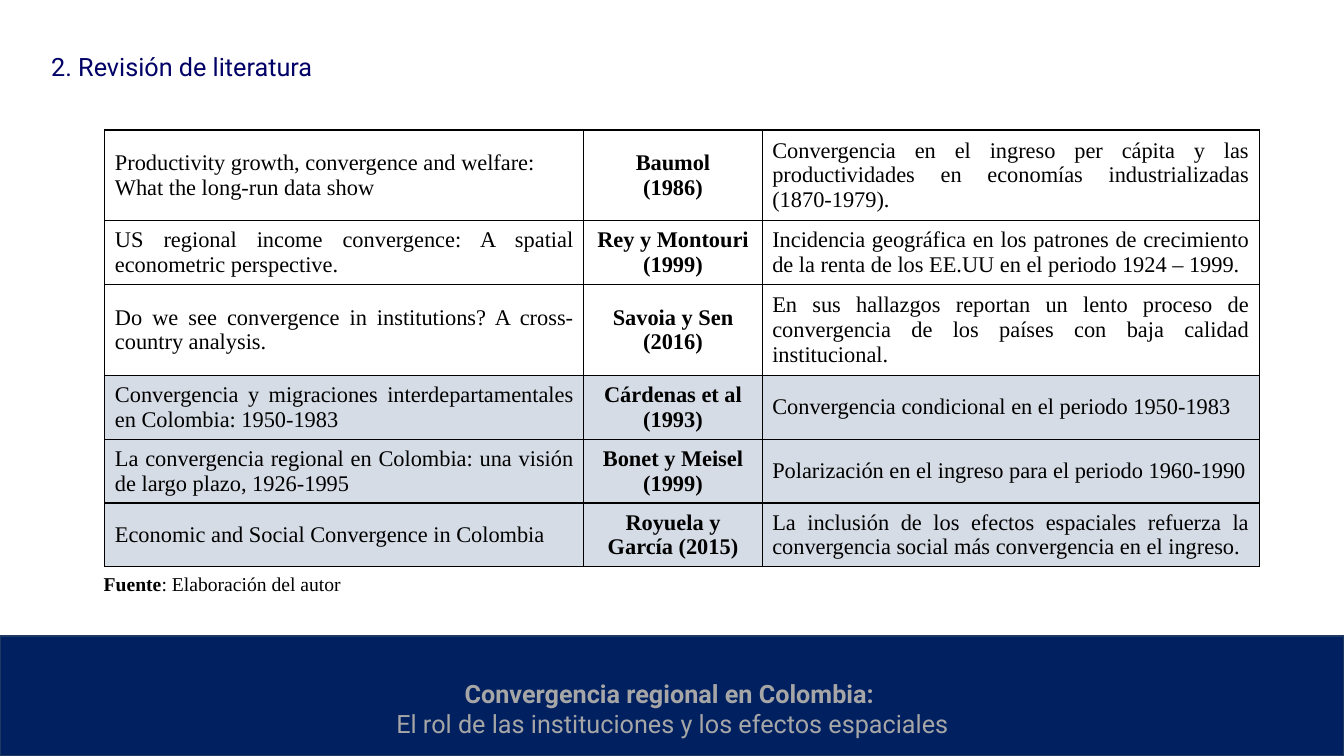
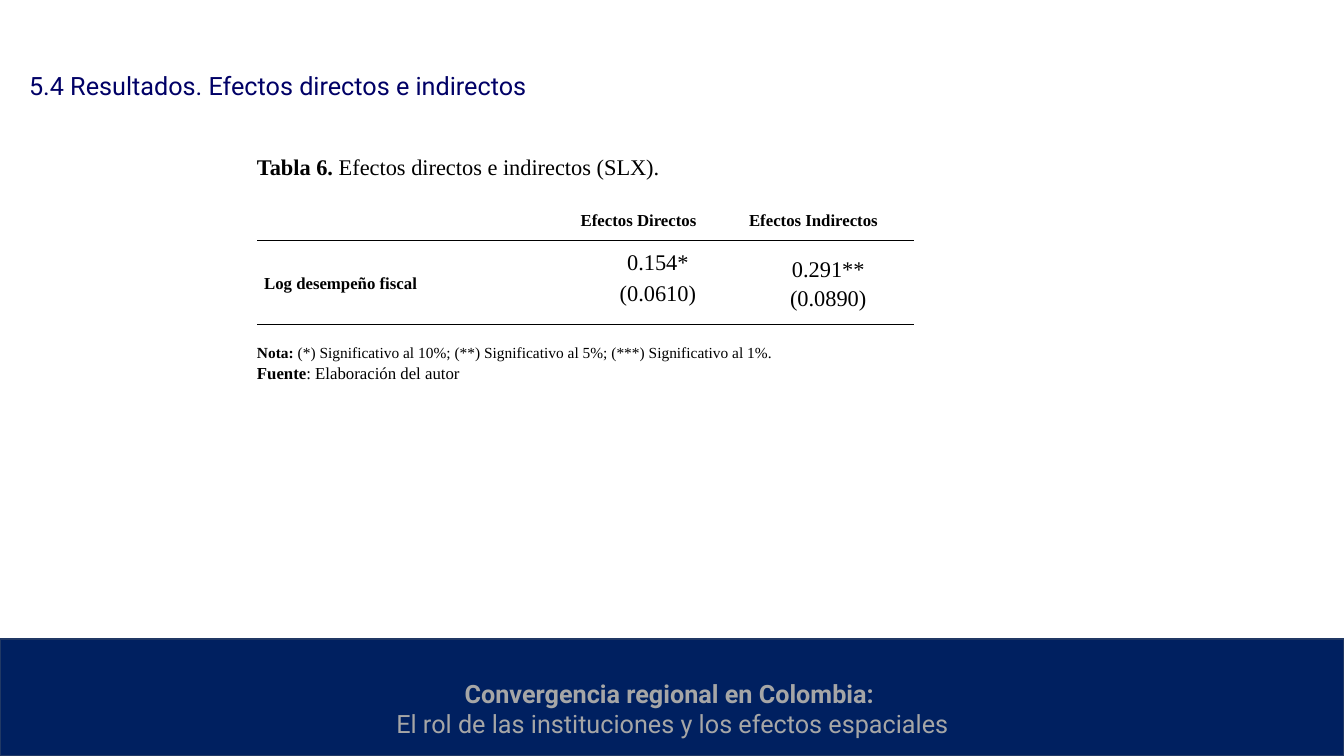
import dataclasses
import typing

import lxml.etree
import pptx
import pptx.dml.color
import pptx.enum.shapes
import pptx.enum.text
import pptx.oxml.ns
import pptx.util

Inches = pptx.util.Inches
Pt = pptx.util.Pt
Align = pptx.enum.text.PP_ALIGN

COLOURS = {
    "title": "000066",
    "text": "000000",
    "band": "002060",
    "band_line": "203864",
    "footer": "A6A6A6",
    "white": "FFFFFF",
    "shaded": "D6DCE5",
}
HEADING_FONT = "Roboto"
BODY_FONT = "Times New Roman"
SLIDE_WIDTH, SLIDE_HEIGHT = 13.33, 7.5
ALL_SIDES = "LRTB"


@dataclasses.dataclass(frozen=True)
class Run:
    text: str
    size: float
    bold: bool = False
    font: str = BODY_FONT
    colour: str = "text"


@dataclasses.dataclass(frozen=True)
class Paragraph:
    runs: tuple[Run, ...]
    align: Align = Align.LEFT
    line_spacing: typing.Any = None
    space_before: float = 0
    space_after: float = 0


@dataclasses.dataclass(frozen=True)
class Cell:
    paragraphs: tuple[Paragraph, ...] = ()
    fill: str = "white"
    borders: str = ALL_SIDES
    margins: tuple[float, float] = (0.1, 0.05)


@dataclasses.dataclass(frozen=True)
class Study:
    titles: tuple[str, ...]
    authors: str
    finding: str
    fill: str = "white"


STUDIES = (
    Study(("Productivity growth, convergence and welfare:", "What the long-run data show"),
          "Baumol\n(1986)",
          "Convergencia en el ingreso per cápita y las productividades en economías "
          "industrializadas (1870-1979)."),
    Study(("US regional income convergence: A spatial econometric perspective.",),
          "Rey y Montouri (1999)",
          "Incidencia geográfica en los patrones de crecimiento de la renta de los EE.UU "
          "en el periodo 1924 – 1999."),
    Study(("Do we see convergence in institutions? A cross-country analysis.",),
          "Savoia y Sen (2016)",
          "En sus hallazgos reportan un lento proceso de convergencia de los países con "
          "baja calidad institucional."),
    Study(("Convergencia y migraciones interdepartamentales en Colombia: 1950-1983",),
          "Cárdenas et al (1993)",
          "Convergencia condicional en el periodo 1950-1983", "shaded"),
    Study(("La convergencia regional en Colombia: una visión de largo plazo, 1926-1995",),
          "Bonet y Meisel (1999)",
          "Polarización en el ingreso para el periodo 1960-1990", "shaded"),
    Study(("Economic and Social Convergence in Colombia",),
          "Royuela y García (2015)",
          "La inclusión de los efectos espaciales refuerza la convergencia social más "
          "convergencia en el ingreso.", "shaded"),
)


def rgb(name: str) -> pptx.dml.color.RGBColor:
    return pptx.dml.color.RGBColor.from_string(COLOURS[name])


def write_text(frame: typing.Any, paragraphs: typing.Sequence[Paragraph]) -> None:
    for index, content in enumerate(paragraphs):
        paragraph = frame.add_paragraph() if index else frame.paragraphs[0]
        paragraph.alignment = content.align
        paragraph.line_spacing = content.line_spacing
        paragraph.space_before = Pt(content.space_before)
        paragraph.space_after = Pt(content.space_after)
        for item in content.runs:
            for position, line in enumerate(item.text.split("\n")):
                if position:
                    paragraph.add_line_break()
                if line:
                    run = paragraph.add_run()
                    run.text = line
                    run.font.name = item.font
                    run.font.size = Pt(item.size)
                    run.font.bold = item.bold
                    run.font.color.rgb = rgb(item.colour)


def add_text(slide: typing.Any, left: float, top: float, width: float, height: float,
             *paragraphs: Paragraph) -> None:
    box = slide.shapes.add_textbox(Inches(left), Inches(top), Inches(width), Inches(height))
    box.text_frame.word_wrap = True
    box.text_frame.auto_size = pptx.enum.text.MSO_AUTO_SIZE.SHAPE_TO_FIT_TEXT
    write_text(box.text_frame, paragraphs)


def set_borders(cell: typing.Any, sides: str) -> None:
    properties = cell._tc.get_or_add_tcPr()
    for index, side in enumerate(ALL_SIDES):
        line = lxml.etree.Element(pptx.oxml.ns.qn(f"a:ln{side}"), w=str(Pt(1)))
        if side in sides:
            fill = lxml.etree.SubElement(line, pptx.oxml.ns.qn("a:solidFill"))
            lxml.etree.SubElement(fill, pptx.oxml.ns.qn("a:srgbClr"), val=COLOURS["text"])
        else:
            lxml.etree.SubElement(line, pptx.oxml.ns.qn("a:noFill"))
        properties.insert(index, line)


def add_table(slide: typing.Any, left: float, top: float, widths: typing.Sequence[float],
              heights: typing.Sequence[float],
              rows: typing.Sequence[typing.Sequence[Cell]]) -> None:
    table = slide.shapes.add_table(
        len(heights), len(widths), Inches(left), Inches(top),
        Inches(sum(widths)), Inches(sum(heights))).table
    table.first_row = False
    table.horz_banding = False
    for column, width in zip(table.columns, widths):
        column.width = Inches(width)
    for row, height, contents in zip(table.rows, heights, rows):
        row.height = Inches(height)
        for cell, content in zip(row.cells, contents):
            horizontal, vertical = content.margins
            cell.margin_left = cell.margin_right = Inches(horizontal)
            cell.margin_top = cell.margin_bottom = Inches(vertical)
            cell.vertical_anchor = pptx.enum.text.MSO_ANCHOR.MIDDLE
            cell.fill.solid()
            cell.fill.fore_color.rgb = rgb(content.fill)
            set_borders(cell, content.borders)
            write_text(cell.text_frame, content.paragraphs)


def add_base_slide(presentation: typing.Any, title: str, title_left: float,
                   title_top: float, band_top: float) -> typing.Any:
    slide = presentation.slides.add_slide(presentation.slide_layouts[6])
    add_text(slide, title_left, title_top, 7.57, 0.4,
             Paragraph((Run(title, 18, font=HEADING_FONT, colour="title"),)))
    band = slide.shapes.add_shape(
        pptx.enum.shapes.MSO_SHAPE.RECTANGLE, Inches(0), Inches(band_top),
        Inches(SLIDE_WIDTH), Inches(SLIDE_HEIGHT - band_top))
    band.shadow.inherit = False
    band.fill.solid()
    band.fill.fore_color.rgb = rgb("band")
    band.line.color.rgb = rgb("band_line")
    band.line.width = Pt(1)
    add_text(slide, 1.89, 6.68, 9.56, 0.71, Paragraph((
        Run("Convergencia regional en Colombia: \n", 18, True, HEADING_FONT, "footer"),
        Run("El rol de las instituciones y los efectos espaciales", 18, False,
            HEADING_FONT, "footer"),
    ), Align.CENTER))
    return slide


def source_note(size: float) -> Paragraph:
    return Paragraph((Run("Fuente", size, True), Run(": Elaboración del autor", size)),
                     line_spacing=1.07)


def study_row(study: Study) -> tuple[Cell, ...]:
    titles = tuple(Paragraph((Run(title, 16),), Align.JUSTIFY) for title in study.titles)
    authors = Paragraph((Run(study.authors, 16, True),), Align.CENTER)
    finding = Paragraph((Run(study.finding, 16),), Align.JUSTIFY)
    return tuple(Cell(content, study.fill) for content in (titles, (authors,), (finding,)))


def effects_cell(borders: str, *paragraphs: Paragraph) -> Cell:
    return Cell(paragraphs, borders=borders, margins=(0.07, 0))


def effects_label(text: str) -> Paragraph:
    return Paragraph((Run(text, 12, True),), Align.JUSTIFY, 1.15)


def add_literature_slide(presentation: typing.Any) -> None:
    slide = add_base_slide(presentation, "2. Revisión de literatura", 0.41, 0.46, 6.31)
    add_table(slide, 1.04, 1.29, (4.75, 1.77, 4.93), (0.9, 0.63, 0.9, 0.63, 0.63, 0.63),
              [study_row(study) for study in STUDIES])
    add_text(slide, 0.93, 5.61, 9.69, 0.34, source_note(14))


def add_effects_slide(presentation: typing.Any) -> None:
    slide = add_base_slide(presentation, "5.4 Resultados. Efectos directos e indirectos",
                           0.19, 0.65, 6.34)
    add_text(slide, 2.45, 1.43, 4.31, 0.41, Paragraph((
        Run("Tabla 6. ", 16, True), Run("Efectos directos e indirectos (SLX).", 16),
    ), Align.JUSTIFY, 1.15, space_after=8))
    header = (
        effects_cell("B"),
        effects_cell("B", effects_label("Efectos Directos")),
        effects_cell("B", effects_label("Efectos Indirectos")),
    )
    values = (
        effects_cell("TB", effects_label("Log desempeño fiscal")),
        effects_cell("TB",
                     Paragraph((Run("0.154*", 16),), Align.CENTER, Pt(11.2)),
                     Paragraph((Run("(0.0610)", 16),), Align.CENTER, Pt(11.2), 11.2)),
        effects_cell("TB", Paragraph((Run("0.291**\n(0.0890)", 16),), Align.CENTER, 1.15)),
    )
    add_table(slide, 2.55, 1.96, (3.14, 1.67, 1.71), (0.43, 0.83), (header, values))
    significance = Paragraph((
        Run("Nota:", 11, True),
        Run(" (*) Significativo al 10%; (**) Significativo al 5%; (***) Significativo al 1%.", 11),
    ), line_spacing=1.07)
    add_text(slide, 2.45, 3.34, 9.69, 0.52, significance, source_note(12))


def main() -> None:
    presentation = pptx.Presentation()
    presentation.slide_width = Inches(SLIDE_WIDTH)
    presentation.slide_height = Inches(SLIDE_HEIGHT)
    add_literature_slide(presentation)
    add_effects_slide(presentation)
    presentation.save("out.pptx")


if __name__ == "__main__":
    main()
